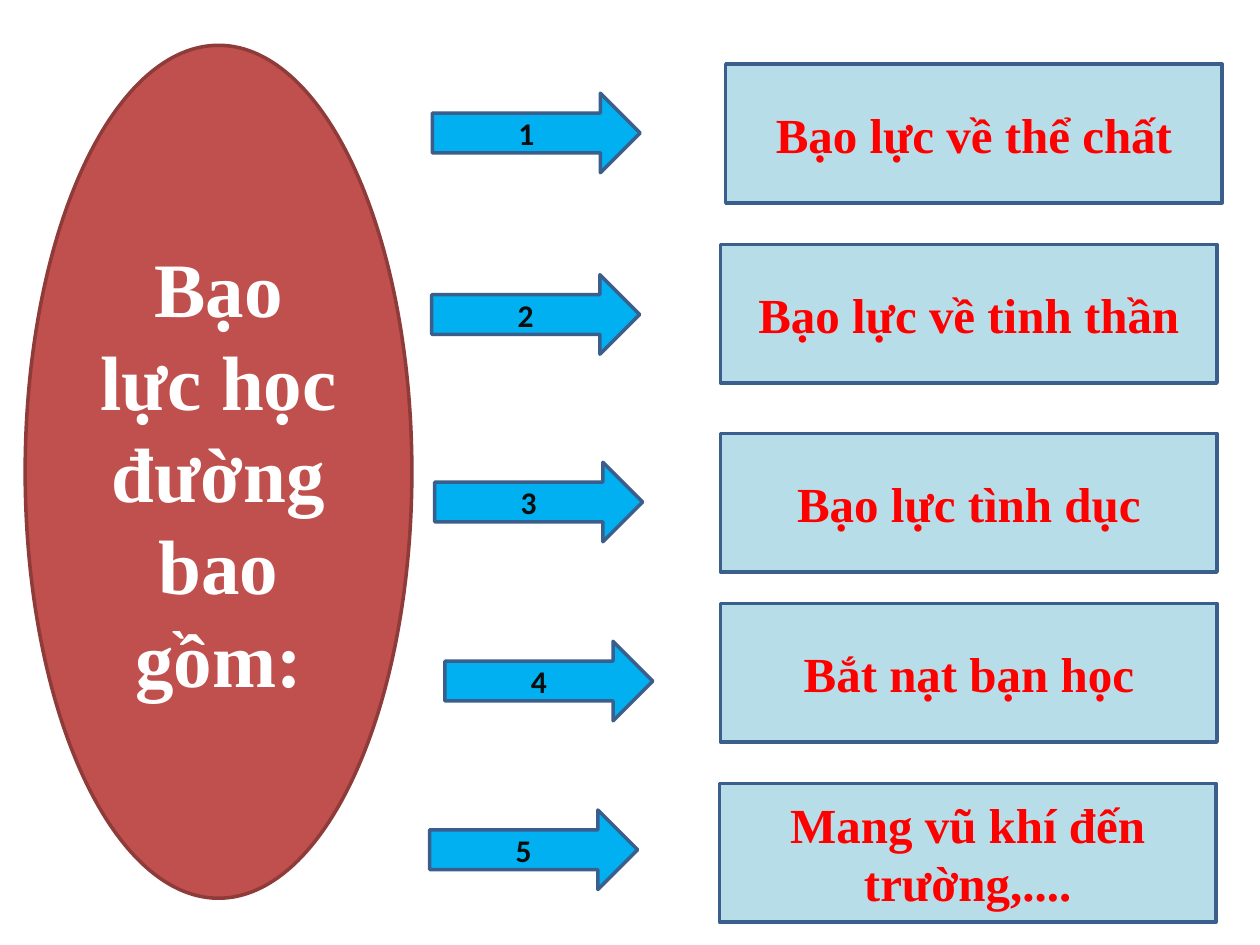
import pptx
import pptx.util
import pptx.dml.color
import pptx.enum.shapes
import pptx.enum.text

Pt = pptx.util.Pt
RGBColor = pptx.dml.color.RGBColor
SHAPE = pptx.enum.shapes.MSO_SHAPE

RED_BROWN = RGBColor(0xC0, 0x50, 0x4D)
DARK_RED = RGBColor(0x8E, 0x3B, 0x39)
SKY_BLUE = RGBColor(0x00, 0xB0, 0xF0)
PALE_BLUE = RGBColor(0xB7, 0xDE, 0xE8)
NAVY = RGBColor(0x3A, 0x5F, 0x8C)
WHITE = RGBColor(0xFF, 0xFF, 0xFF)
BLACK = RGBColor(0x0D, 0x0D, 0x0D)
RED = RGBColor(0xFF, 0x00, 0x00)

TOPIC = "Bạo lực học đường bao gồm:"
TOPIC_BOUNDS = (14.4, 25.9, 221, 487.4)
ARROW_SIZE = (118.8, 45.4)
BOX_SIZE = (283.7, 79.2)
# text, arrow left and top, box left and top
FORMS = [
    ("Bạo lực về thể chất", (247, 53.3), (414.7, 36.7)),
    ("Bạo lực về tinh thần", (246.7, 157), (411.8, 139.7)),
    ("Bạo lực tình dục", (248.4, 264.2), (411.8, 247.7)),
    ("Bắt nạt bạn học", (254.2, 366.5), (411.8, 344.9)),
    ("Mang vũ khí đến trường,....", (245.5, 462.9), (411.1, 447.8)),
]

TOPIC_STYLE = (SHAPE.OVAL, RED_BROWN, DARK_RED,
               {"name": "Times New Roman", "size": Pt(44), "bold": True}, WHITE)
ARROW_STYLE = (SHAPE.RIGHT_ARROW, SKY_BLUE, NAVY,
               {"name": "Calibri", "size": Pt(18), "bold": True}, BLACK)
BOX_STYLE = (SHAPE.RECTANGLE, PALE_BLUE, NAVY,
             {"name": "Times New Roman", "size": Pt(28), "bold": True}, RED)


def add_label(slide, text, bounds, style):
    kind, fill, outline, font_format, text_color = style
    shape = slide.shapes.add_shape(kind, *(Pt(value) for value in bounds))
    shape.shadow.inherit = False
    shape.fill.solid()
    shape.fill.fore_color.rgb = fill
    shape.line.color.rgb = outline
    shape.line.width = Pt(2)
    frame = shape.text_frame
    frame.word_wrap = True
    frame.vertical_anchor = pptx.enum.text.MSO_ANCHOR.MIDDLE
    paragraph = frame.paragraphs[0]
    paragraph.alignment = pptx.enum.text.PP_ALIGN.CENTER
    run = paragraph.add_run()
    run.text = text
    for name, value in font_format.items():
        setattr(run.font, name, value)
    run.font.color.rgb = text_color


def main():
    presentation = pptx.Presentation()
    presentation.slide_width, presentation.slide_height = Pt(720), Pt(540)
    slide = presentation.slides.add_slide(presentation.slide_layouts[6])
    add_label(slide, TOPIC, TOPIC_BOUNDS, TOPIC_STYLE)
    for number, (text, arrow_position, box_position) in enumerate(FORMS, 1):
        add_label(slide, str(number), arrow_position + ARROW_SIZE, ARROW_STYLE)
        add_label(slide, text, box_position + BOX_SIZE, BOX_STYLE)
    presentation.save("out.pptx")


if __name__ == "__main__":
    main()
